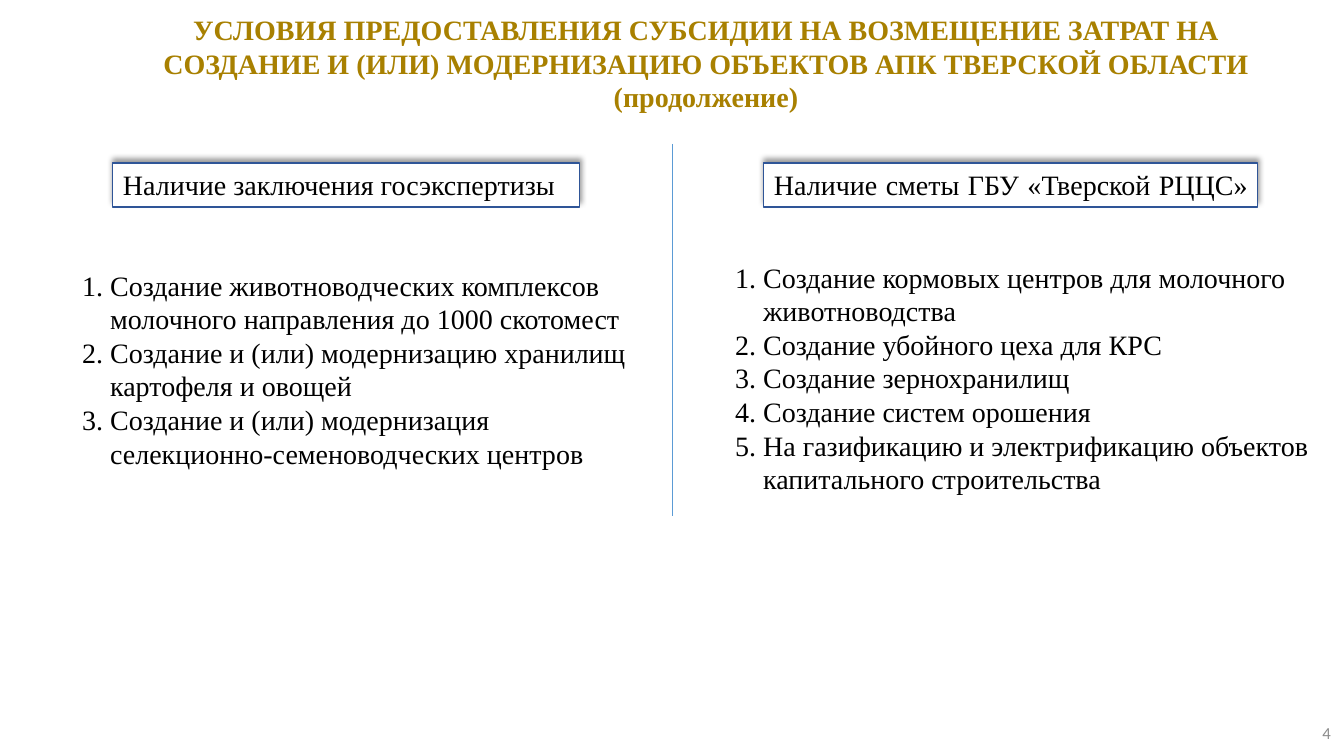
from lxml import etree
from pptx import Presentation
from pptx.dml.color import RGBColor
from pptx.enum.shapes import MSO_CONNECTOR, MSO_SHAPE
from pptx.enum.text import MSO_ANCHOR, MSO_AUTO_SIZE, PP_ALIGN
from pptx.oxml.ns import qn
from pptx.util import Pt

ROUND, LINE = MSO_SHAPE.ROUNDED_RECTANGLE, MSO_CONNECTOR.STRAIGHT
TOP, MIDDLE = MSO_ANCHOR.TOP, MSO_ANCHOR.MIDDLE
LEFT, CENTER = PP_ALIGN.LEFT, PP_ALIGN.CENTER
RIGHT, JUSTIFY = PP_ALIGN.RIGHT, PP_ALIGN.JUSTIFY
FIXED = MSO_AUTO_SIZE.NONE

SERIF, SANS = "Times New Roman", "Calibri"
HUES = {"gold": "A88000", "ink": "000000", "paper": "FFFFFF",
        "edge": "2F5597", "rule": "5B9BD5", "grey": "8C8C8C"}

TITLE = ("УСЛОВИЯ ПРЕДОСТАВЛЕНИЯ СУБСИДИИ НА ВОЗМЕЩЕНИЕ ЗАТРАТ НА "
         "СОЗДАНИЕ И (ИЛИ) МОДЕРНИЗАЦИЮ ОБЪЕКТОВ АПК ТВЕРСКОЙ ОБЛАСТИ "
         "(продолжение)")
EXPERT = [
    "Создание животноводческих комплексов молочного направления до 1000 скотомест",
    "Создание и (или) модернизацию хранилищ картофеля и овощей",
    "Создание и (или) модернизация селекционно-семеноводческих центров",
]
BUDGET = [
    "Создание кормовых центров для молочного животноводства",
    "Создание убойного цеха для КРС",
    "Создание зернохранилищ",
    "Создание систем орошения",
    "На газификацию и электрификацию объектов капитального строительства",
]


def px(n):
    return round(n * 914400 / 100.8)


def hue(name):
    return RGBColor.from_string(HUES[name])


def place(shape, box):
    shape.left, shape.top, shape.width, shape.height = map(px, box)


def frame(shape, anchor):
    text = shape.text_frame
    text.word_wrap = True
    text.auto_size = FIXED
    text.vertical_anchor = anchor
    return text


def write(para, words, color, align, size=20, face=SERIF, bold=False):
    para.alignment = align
    para.line_spacing = 1.0
    para.space_before = para.space_after = Pt(0)
    run = para.add_run()
    run.text = words
    font = run.font
    font.name, font.size, font.bold = face, Pt(size), bold
    font.color.rgb = hue(color)


def effects(shape):
    return etree.SubElement(shape._element.spPr, qn("a:effectLst"))


def shade(shape):
    """Soft shadow cast upwards."""
    outer = etree.SubElement(effects(shape), qn("a:outerShdw"), blurRad=str(Pt(4)),
                             dist=str(Pt(3)), dir="16200000", rotWithShape="0")
    color = etree.SubElement(outer, qn("a:srgbClr"), val=HUES["ink"])
    etree.SubElement(color, qn("a:alpha"), val="40000")


def number(para, indent):
    props = para._p.get_or_add_pPr()
    props.set("marL", str(px(indent)))
    props.set("indent", str(-px(indent)))
    etree.SubElement(props, qn("a:buFont"), typeface=SERIF)
    etree.SubElement(props, qn("a:buAutoNum"), type="arabicPeriod")


def add_title(slide, box):
    title = slide.shapes.title
    place(title, box)
    write(frame(title, MIDDLE).paragraphs[0], TITLE, "gold", CENTER, bold=True)


def add_head(slide, box, words):
    head = slide.shapes.add_shape(ROUND, *map(px, box))
    head.adjustments[0] = 0
    head.fill.solid()
    head.fill.fore_color.rgb = hue("paper")
    head.line.color.rgb = hue("edge")
    head.line.width = Pt(0)
    shade(head)
    write(frame(head, TOP).paragraphs[0], words, "ink", JUSTIFY)


def add_list(body, box, items):
    place(body, box)
    text = frame(body, TOP)
    text.margin_right = px(20)
    for i, item in enumerate(items):
        para = text.add_paragraph() if i else text.paragraphs[0]
        number(para, 28)
        write(para, item, "ink", LEFT)


def add_rule(slide, x, top, end):
    rule = slide.shapes.add_connector(LINE, px(x), px(top), px(x), px(end))
    rule.line.color.rgb = hue("rule")
    rule.line.width = Pt(0.5)
    effects(rule)


def add_page(slide, box, words):
    page = slide.shapes.add_textbox(*map(px, box))
    write(frame(page, MIDDLE).paragraphs[0], words, "grey", RIGHT, 12, SANS)


def main():
    deck = Presentation()
    deck.slide_width, deck.slide_height = px(1344), px(756)
    slide = deck.slides.add_slide(deck.slide_layouts[3])
    left, right = slide.placeholders[1], slide.placeholders[2]

    # Title
    add_title(slide, (118, 14, 1176, 98))

    # Left column
    add_head(slide, (113, 163, 467, 44), "Наличие заключения госэкспертизы")
    add_list(left, (72, 263, 583, 214), EXPERT)

    # Right column
    add_head(slide, (764, 163, 494, 44), "Наличие сметы ГБУ «Тверской РЦЦС» ")
    add_list(right, (725, 255, 630, 248), BUDGET)

    # Divider and page number
    add_rule(slide, 672, 144, 516)
    add_page(slide, (1039, 713, 302, 40), "4")

    deck.save("out.pptx")


if __name__ == "__main__":
    main()
